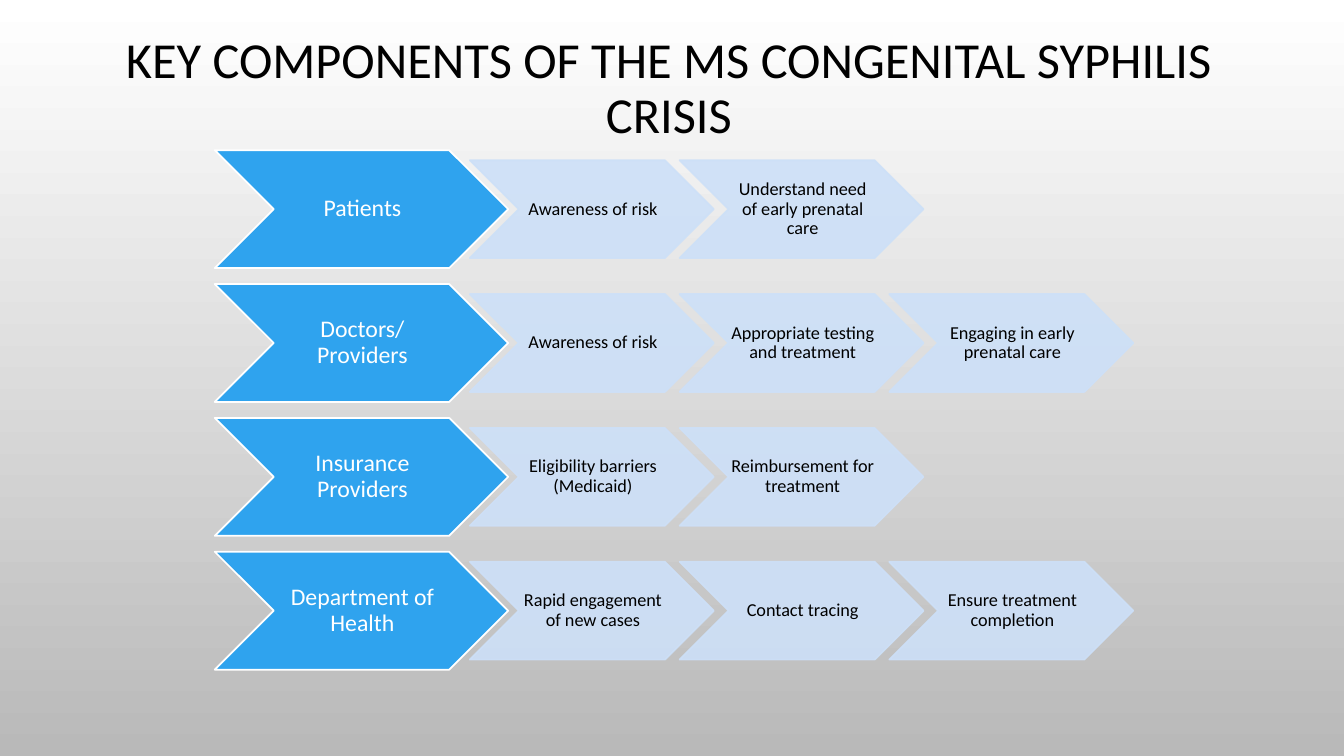
from lxml import etree
from pptx import Presentation
from pptx.dml.color import RGBColor
from pptx.enum import shapes, text
from pptx.oxml import ns
from pptx.util import Inches, Pt

# Content: each group and its steps
TITLE = "KEY COMPONENTS OF THE MS CONGENITAL SYPHILIS CRISIS"
ROWS = [
    ("Patients", ["Awareness of risk", "Understand need of early prenatal care"]),
    ("Doctors/Providers", ["Awareness of risk", "Appropriate testing and treatment",
                           "Engaging in early prenatal care"]),
    ("Insurance Providers", ["Eligibility barriers (Medicaid)",
                             "Reimbursement for treatment"]),
    ("Department of Health", ["Rapid engagement of new cases", "Contact tracing",
                              "Ensure treatment completion"]),
]

# Layout in inches
FONT = "Calibri"
ROW_TOP, ROW_PITCH = 1.49, 1.328
LEAD_LEFT, LEAD_WIDTH, LEAD_HEIGHT = 2.13, 2.91, 1.17
STEP_LEFT, STEP_PITCH, STEP_WIDTH, STEP_HEIGHT = 4.66, 2.08, 2.42, 0.97


def color(hex_value):
    return RGBColor.from_string(hex_value)


def write(frame, words, size, hex_value):
    frame.word_wrap = True
    frame.auto_size = text.MSO_AUTO_SIZE.NONE
    frame.vertical_anchor = text.MSO_ANCHOR.MIDDLE
    paragraph = frame.paragraphs[0]
    paragraph.alignment = text.PP_ALIGN.CENTER
    paragraph.line_spacing = 0.9
    run = paragraph.add_run()
    run.text = words
    run.font.name = FONT
    run.font.size = Pt(size)
    run.font.color.rgb = color(hex_value)


def add_chevron(group, box, words, size, fill, line, font_color, opacity=100):
    shape = group.shapes.add_shape(shapes.MSO_SHAPE.CHEVRON, *map(Inches, box))
    shape.shadow.inherit = False
    shape.fill.solid()
    shape.fill.fore_color.rgb = color(fill)
    shape.line.color.rgb = color(line)
    shape.line.width = Pt(1.25)
    if opacity < 100:
        for paint in shape.fill._xPr.iter(ns.qn("a:srgbClr")):
            etree.SubElement(paint, ns.qn("a:alpha"), val=str(opacity * 1000))
    frame = shape.text_frame
    frame.margin_left = Inches(0.02)
    frame.margin_right = 0
    frame.margin_top = frame.margin_bottom = Inches(0.01)
    write(frame, words, size, font_color)


presentation = Presentation()
presentation.slide_width, presentation.slide_height = Inches(13.33), Inches(7.5)
slide = presentation.slides.add_slide(presentation.slide_layouts[5])

# Background gradient, top to bottom
background = slide.background.fill
background.gradient()
background.gradient_angle = 270
for stop, position, shade in zip(background.gradient_stops, (0, 1), ("FFFFFF", "B9B9B9")):
    stop.position = position
    stop.color.rgb = color(shade)

# Title
title = slide.shapes.title
title.left, title.top = Inches(0.97), Inches(0.14)
title.width, title.height = Inches(11.33), Inches(1.5)
write(title.text_frame, TITLE, 36, "000000")

# Chevron rows: a lead chevron, then its steps centred on it
diagram = slide.shapes.add_group_shape()
for row, (lead, steps) in enumerate(ROWS):
    top = ROW_TOP + row * ROW_PITCH
    add_chevron(diagram, (LEAD_LEFT, top, LEAD_WIDTH, LEAD_HEIGHT),
                lead, 17, "2FA3EE", "FFFFFF", "FFFFFF")
    step_top = top + (LEAD_HEIGHT - STEP_HEIGHT) / 2
    for column, step in enumerate(steps):
        left = STEP_LEFT + column * STEP_PITCH
        add_chevron(diagram, (left, step_top, STEP_WIDTH, STEP_HEIGHT),
                    step, 13, "CDE0F8", "CDE0F8", "000000", opacity=90)

presentation.save("out.pptx")
